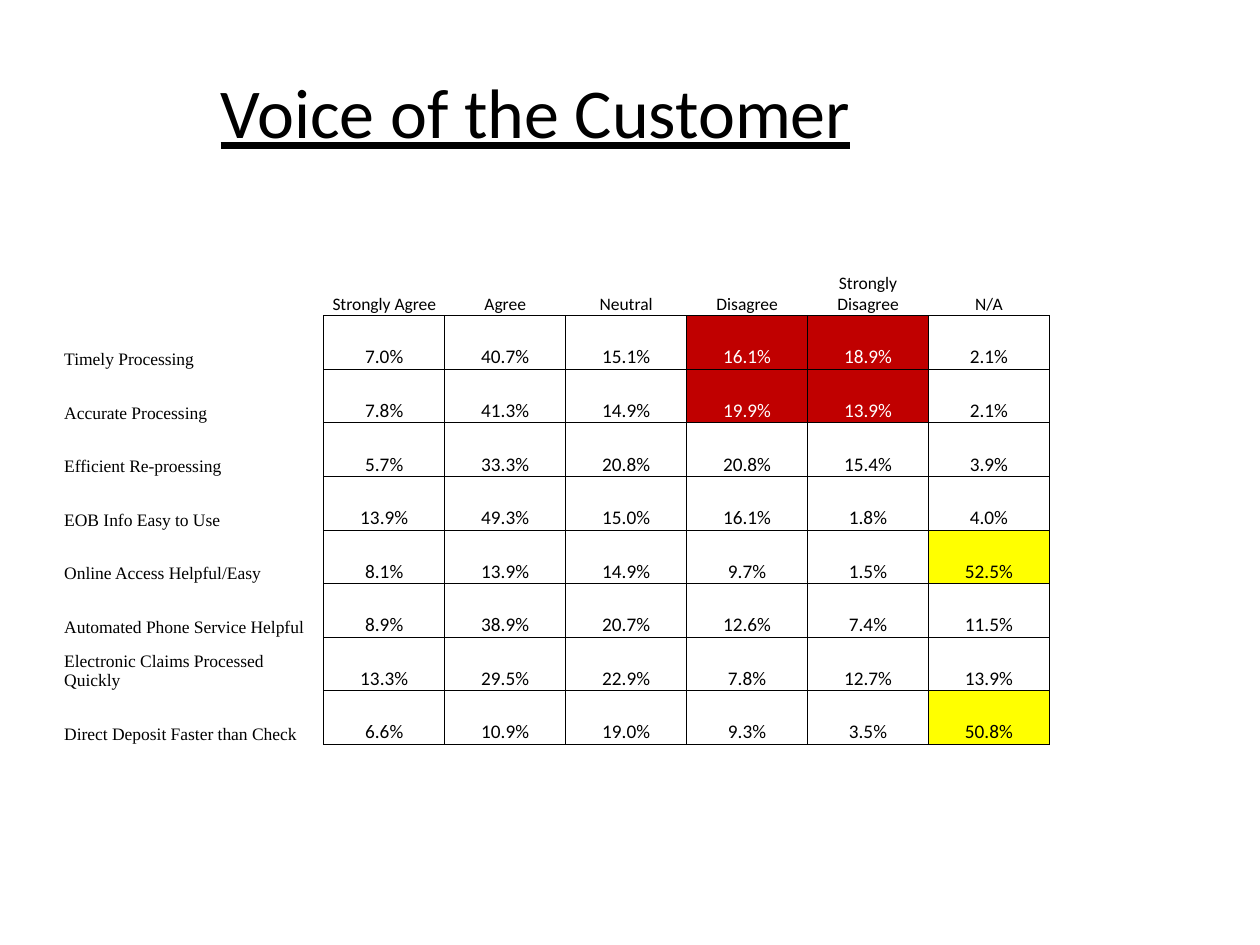
"""Build a slide with a table of customer survey answers."""
import pptx
import pptx.dml.color
import pptx.enum.text
import pptx.oxml
import pptx.oxml.ns
import pptx.util

Inches, Pt = pptx.util.Inches, pptx.util.Pt
RGBColor = pptx.dml.color.RGBColor
PP_ALIGN = pptx.enum.text.PP_ALIGN
MSO_ANCHOR = pptx.enum.text.MSO_ANCHOR

BLACK = RGBColor(0x00, 0x00, 0x00)
WHITE = RGBColor(0xFF, 0xFF, 0xFF)
RED = RGBColor(0xC0, 0x00, 0x00)
YELLOW = RGBColor(0xFF, 0xFF, 0x00)

TITLE = "Voice of the Customer"
HEADERS = ["", "Strongly Agree", "Agree", "Neutral", "Disagree", "Strongly Disagree", "N/A"]
ANSWERS = [
    ("Timely Processing", 7.0, 40.7, 15.1, 16.1, 18.9, 2.1),
    ("Accurate Processing", 7.8, 41.3, 14.9, 19.9, 13.9, 2.1),
    ("Efficient Re-proessing", 5.7, 33.3, 20.8, 20.8, 15.4, 3.9),
    ("EOB Info Easy to Use", 13.9, 49.3, 15.0, 16.1, 1.8, 4.0),
    ("Online Access Helpful/Easy", 8.1, 13.9, 14.9, 9.7, 1.5, 52.5),
    ("Automated Phone Service Helpful", 8.9, 38.9, 20.7, 12.6, 7.4, 11.5),
    ("Electronic Claims Processed Quickly", 13.3, 29.5, 22.9, 7.8, 12.7, 13.9),
    ("Direct Deposit Faster than Check", 6.6, 10.9, 19.0, 9.3, 3.5, 50.8),
]
HIGHLIGHTS = {(1, 4): RED, (1, 5): RED, (2, 4): RED, (2, 5): RED, (5, 6): YELLOW, (8, 6): YELLOW}

LEFT, TOP, WIDTH, HEIGHT = 0.5, 2.08, 7.83, 3.83
LABEL_WIDTH = 2.07


def add_text(tf, text, font, size, color, align):
    p = tf.paragraphs[0]
    p.alignment = align
    r = p.add_run()
    r.text = text
    r.font.name, r.font.size, r.font.bold = font, Pt(size), False
    r.font.color.rgb = color
    return r


def set_borders(cell, drawn):
    tc_pr = cell._tc.get_or_add_tcPr()
    for i, side in enumerate("LRTB"):
        fill = f'<a:solidFill><a:srgbClr val="{BLACK}"/></a:solidFill>' if side in drawn else "<a:noFill/>"
        tc_pr.insert(i, pptx.oxml.parse_xml(
            f'<a:ln{side} {pptx.oxml.ns.nsdecls("a")} w="{Pt(0.5)}">{fill}</a:ln{side}>'))


def fill_cell(cell, row, col, value):
    cell.vertical_anchor = MSO_ANCHOR.BOTTOM
    cell.margin_left = cell.margin_right = cell.margin_top = Inches(0.01)
    cell.margin_bottom = 0
    highlight = HIGHLIGHTS.get((row, col))
    if highlight is None:
        cell.fill.background()
    else:
        cell.fill.solid()
        cell.fill.fore_color.rgb = highlight
    if row and col:
        color = WHITE if highlight == RED else BLACK
        add_text(cell.text_frame, f"{value:.1f}%", "Calibri", 11, color, PP_ALIGN.CENTER)
        set_borders(cell, "LRTB")
    elif row:
        add_text(cell.text_frame, value, "Times New Roman", 10, BLACK, PP_ALIGN.LEFT)
        set_borders(cell, "R")
    elif col:
        add_text(cell.text_frame, value, "Calibri", 10, BLACK, PP_ALIGN.CENTER)
        set_borders(cell, "B")
    else:
        set_borders(cell, "")


def main():
    prs = pptx.Presentation()
    prs.slide_width, prs.slide_height = Inches(10), Inches(7.5)
    s = prs.slides.add_slide(prs.slide_layouts[5])

    title = s.shapes.title
    title.left, title.top, title.width, title.height = 0, Inches(0.25), Inches(8.5), Inches(1.25)
    title.text_frame.vertical_anchor = MSO_ANCHOR.MIDDLE
    add_text(title.text_frame, TITLE, "Calibri", 40, BLACK, PP_ALIGN.CENTER).font.underline = True

    rows = [HEADERS, *ANSWERS]
    table = s.shapes.add_table(len(rows), len(HEADERS), Inches(LEFT), Inches(TOP),
                               Inches(WIDTH), Inches(HEIGHT)).table
    table.first_row = table.horz_banding = False
    for col, column in enumerate(table.columns):
        column.width = Inches((WIDTH - LABEL_WIDTH) / (len(HEADERS) - 1) if col else LABEL_WIDTH)
    for row, values in enumerate(rows):
        table.rows[row].height = Inches(HEIGHT / len(rows))
        for col, value in enumerate(values):
            fill_cell(table.cell(row, col), row, col, value)

    prs.save("out.pptx")


if __name__ == "__main__":
    main()
